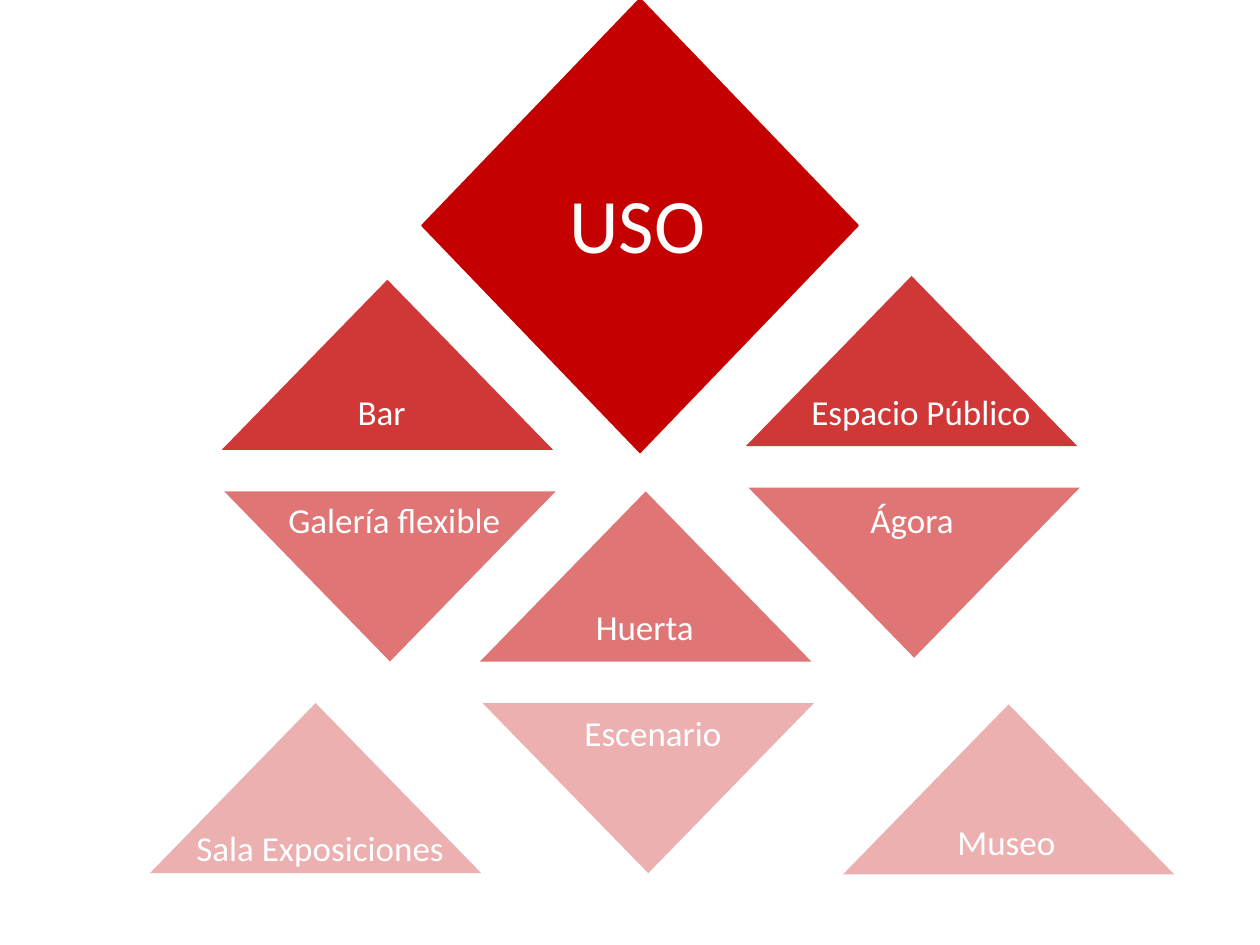
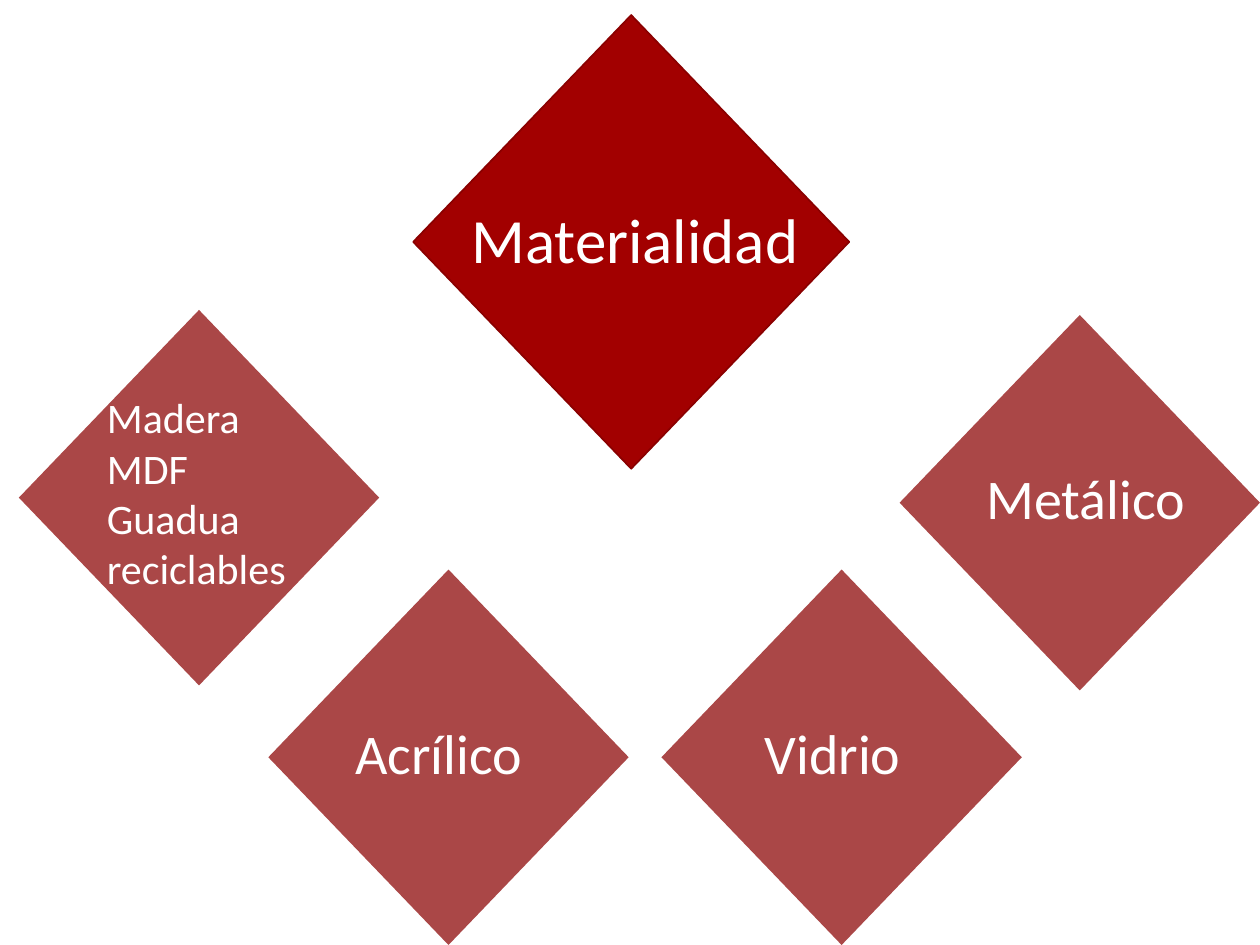
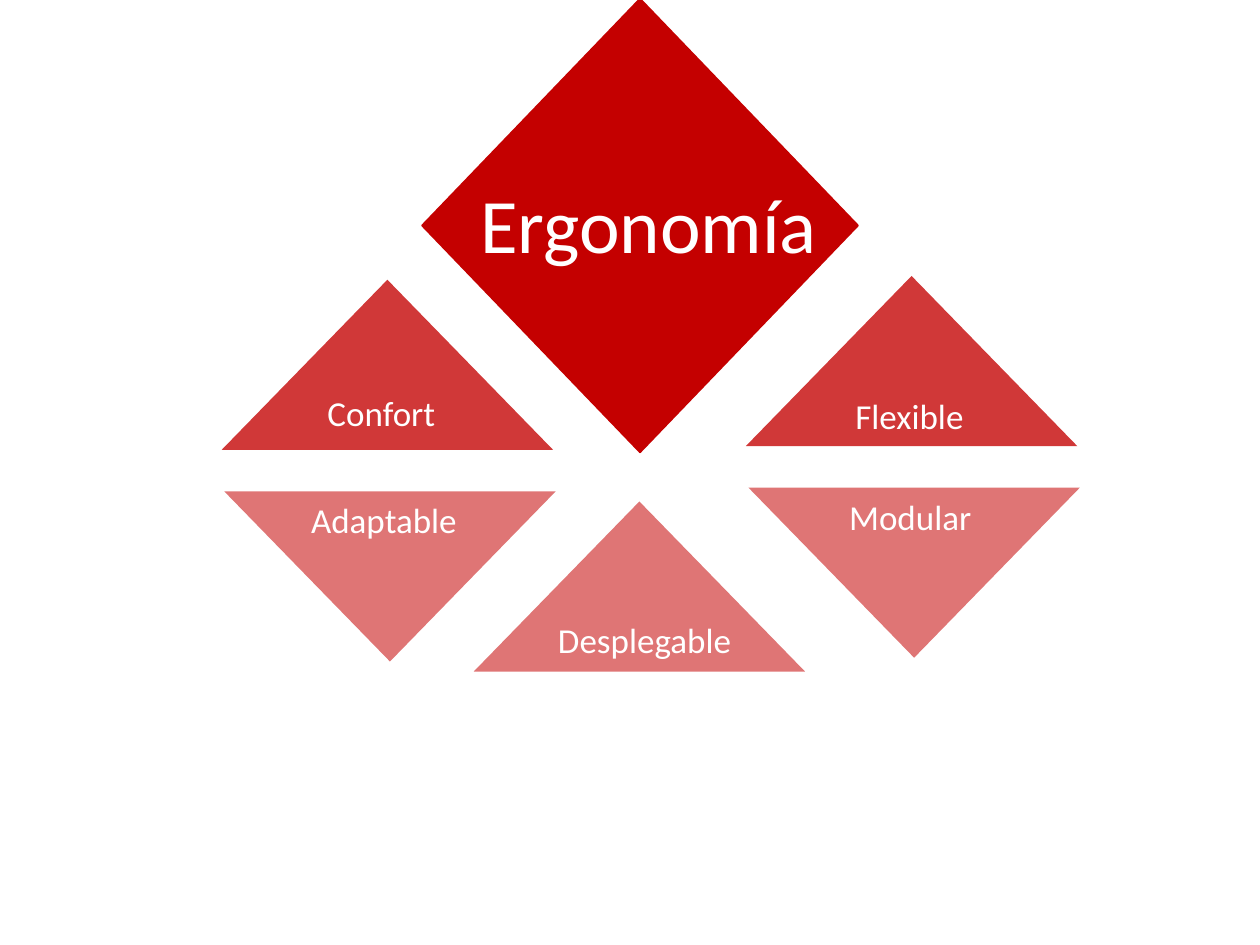
from dataclasses import dataclass
from typing import Optional

from lxml.etree import SubElement
from pptx import Presentation
from pptx.dml.color import RGBColor
from pptx.enum.shapes import MSO_SHAPE as Preset
from pptx.enum.text import MSO_ANCHOR as Anchor, MSO_AUTO_SIZE as AutoSize, PP_ALIGN as Align
from pptx.oxml.ns import qn
from pptx.util import Inches, Pt

RED = RGBColor(0xC4, 0x00, 0x00)
DARK_RED = RGBColor(0xA2, 0x00, 0x00)
MAROON = RGBColor(0x8A, 0x00, 0x00)
WHITE = RGBColor(0xFF, 0xFF, 0xFF)
FONT = "Calibri"
TITLE_ONLY = 5

# Triangle grid: opacity fades row by row
LEFT, MIDDLE, RIGHT = 1.76, 3.81, 5.92
FIRST_ROW, ROW_STEP = 2.22, 1.68
ROW_OPACITY = (78, 54, 31)
TRIANGLE_SIZE = (2.63, 1.35)
FLIP_SHIFT = 0.02
RIGHT_LIFT = -0.03
TRIANGLE_LABEL = (2.21, 0.44)

HEAD_SIZE = (3.46, 3.6)
MATERIAL_SIZE = (2.86, 2.98)
MATERIAL_OPACITY = 72
MATERIAL_LABEL_WIDTH = 2.41


@dataclass(frozen=True)
class Head:
    text: str
    left: float
    top: float
    label: tuple[float, float, float, float]
    size: int = 44
    fill: RGBColor = RED
    line: RGBColor = RED


@dataclass(frozen=True)
class Triangle:
    text: str
    column: float
    row: int
    label_left: float
    label_top: float
    flipped: bool = False
    nudge: float = 0


@dataclass(frozen=True)
class Material:
    lines: tuple[str, ...]
    left: float
    top: float
    label_left: float
    label_top: float
    label_height: float = 0.64
    size: int = 32


USE_HEAD = Head("USO", 3.35, -0.01, (4.42, 1.35, 3, 0.84))
USES = (
    Triangle("Espacio Público", RIGHT, 0, 6.34, 3.05, nudge=RIGHT_LIFT),
    Triangle("Ágora", RIGHT, 1, 6.81, 3.91, flipped=True, nudge=RIGHT_LIFT),
    Triangle("Bar", LEFT, 0, 2.74, 3.05),
    Triangle("Galería flexible", LEFT, 1, 2.19, 3.91, flipped=True),
    Triangle("Huerta", MIDDLE, 1, 4.63, 4.76),
    Triangle("Escenario", MIDDLE, 2, 4.54, 5.6, flipped=True),
    Triangle("Sala Exposiciones", 1.19, 2, 1.46, 6.51),
    Triangle("Museo", 6.69, 2, 7.5, 6.46, nudge=0.01),
)

MATERIAL_HEAD = Head("Materialidad", 3.28, 0.12, (3.64, 1.54, 3, 0.71), 36, DARK_RED, MAROON)
MATERIALS = (
    Material(("Metálico",), 7.14, 2.5, 7.73, 3.63),
    Material(("Madera\vMDF", "Guadua", "reciclables"), 0.15, 2.46, 0.75, 3.06, 1.72, 24),
    Material(("Acrílico",), 2.13, 4.52, 2.72, 5.65),
    Material(("Vidrio",), 5.25, 4.52, 5.97, 5.65),
)

ERGONOMICS_HEAD = Head("Ergonomía", 3.35, -0.01, (3.71, 1.35, 3.55, 0.84))
ERGONOMICS = (
    Triangle("Flexible", RIGHT, 0, 6.69, 3.08, nudge=RIGHT_LIFT),
    Triangle("Modular", RIGHT, 1, 6.64, 3.88, flipped=True, nudge=RIGHT_LIFT),
    Triangle("Confort", LEFT, 0, 2.5, 3.06),
    Triangle("Adaptable", LEFT, 1, 2.37, 3.91, flipped=True),
    Triangle("Desplegable", 3.76, 1, 4.33, 4.86, nudge=0.08),
)


def add_figure(page, preset: Preset, left: float, top: float, size: tuple[float, float],
               fill: RGBColor, opacity: int = 100, line: Optional[RGBColor] = None):
    figure = page.shapes.add_shape(preset, Inches(left), Inches(top), *map(Inches, size))
    figure.shadow.inherit = False
    figure.fill.solid()
    figure.fill.fore_color.rgb = fill
    if opacity < 100:
        color = figure.fill._xPr.find(qn("a:solidFill"))[0]
        SubElement(color, qn("a:alpha"), val=str(opacity * 1000))
    if line is None:
        figure.line.fill.background()
    else:
        figure.line.color.rgb = line
        figure.line.width = Pt(1)
    return figure


def write(box, lines: tuple[str, ...], size: int) -> None:
    frame = box.text_frame
    frame.word_wrap = True
    frame.auto_size = AutoSize.SHAPE_TO_FIT_TEXT
    frame.vertical_anchor = Anchor.TOP
    for number, line in enumerate(lines):
        para = frame.add_paragraph() if number else frame.paragraphs[0]
        para.text = line
        para.alignment = Align.LEFT
        para.font.name = FONT
        para.font.size = Pt(size)
        para.font.color.rgb = WHITE


def add_label(page, lines: tuple[str, ...], left: float, top: float,
              width: float, height: float, size: int) -> None:
    write(page.shapes.add_textbox(*map(Inches, (left, top, width, height))), lines, size)


def add_page(deck, head: Head):
    """Start a slide with its title lying on the large diamond."""
    page = deck.slides.add_slide(deck.slide_layouts[TITLE_ONLY])
    diamond = add_figure(page, Preset.DIAMOND, head.left, head.top, HEAD_SIZE,
                         head.fill, line=head.line)
    title = page.shapes.title
    title.left, title.top, title.width, title.height = map(Inches, head.label)
    write(title, (head.text,), head.size)
    title._element.addprevious(diamond._element)
    return page


def add_triangle(page, item: Triangle) -> None:
    left = item.column + FLIP_SHIFT * item.flipped
    top = FIRST_ROW + ROW_STEP * item.row + item.nudge
    figure = add_figure(page, Preset.ISOSCELES_TRIANGLE, left, top, TRIANGLE_SIZE,
                        RED, ROW_OPACITY[item.row])
    figure.rotation = 180 if item.flipped else 0
    add_label(page, (item.text,), item.label_left, item.label_top, *TRIANGLE_LABEL, 20)


def add_material(page, item: Material) -> None:
    add_figure(page, Preset.DIAMOND, item.left, item.top, MATERIAL_SIZE,
               MAROON, MATERIAL_OPACITY)
    add_label(page, item.lines, item.label_left, item.label_top,
              MATERIAL_LABEL_WIDTH, item.label_height, item.size)


def main() -> None:
    deck = Presentation()
    deck.slide_width, deck.slide_height = Inches(10), Inches(7.5)
    for head, items, draw in (
        (USE_HEAD, USES, add_triangle),
        (MATERIAL_HEAD, MATERIALS, add_material),
        (ERGONOMICS_HEAD, ERGONOMICS, add_triangle),
    ):
        page = add_page(deck, head)
        for item in items:
            draw(page, item)
    deck.save("out.pptx")


if __name__ == "__main__":
    main()
